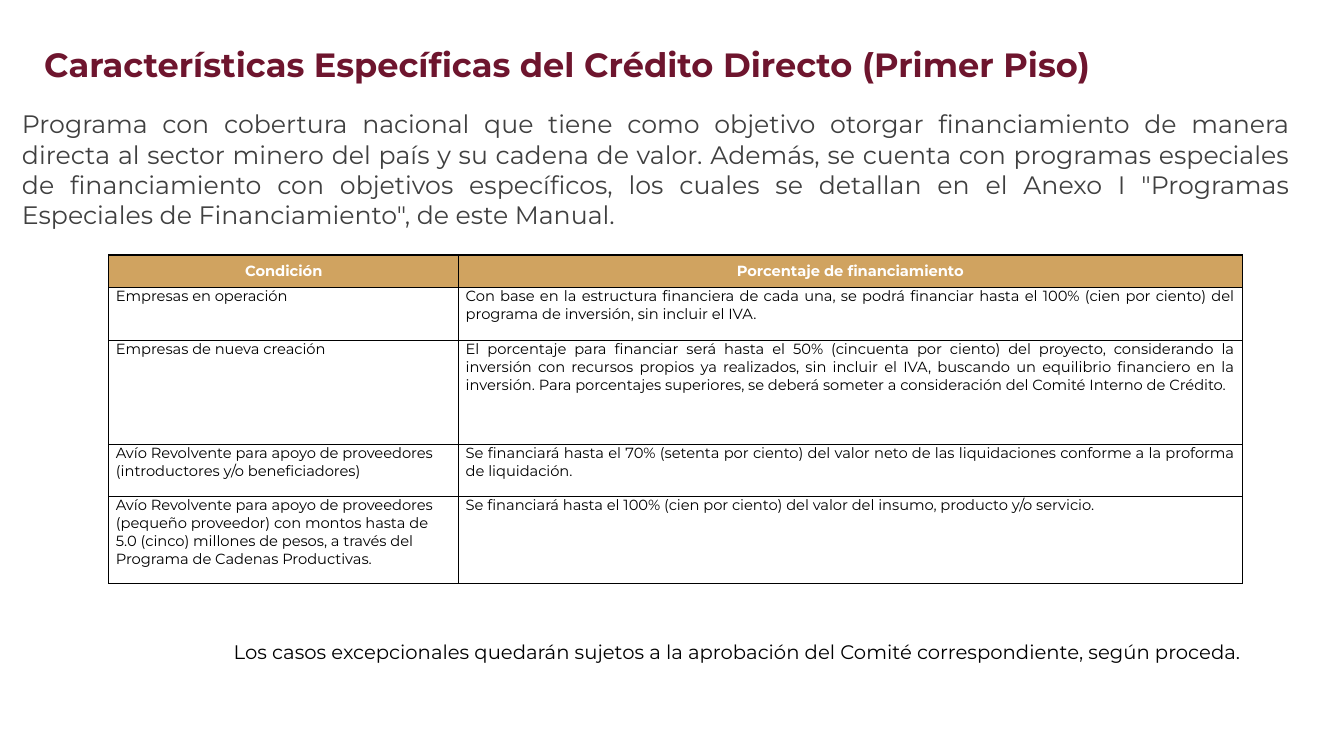
from lxml import etree
from pptx import Presentation
from pptx import util as u
from pptx.dml import color
from pptx.enum import text
from pptx.oxml import ns

FONT = "Montserrat"
COLORS = {"wine": "6E152E", "gray": "404040", "gold": "D0A360",
          "white": "FFFFFF", "black": "000000"}
ALIGN = text.PP_ALIGN

TITLE = "Características Específicas del Crédito Directo (Primer Piso)"
INTRO = ("Programa con cobertura nacional que tiene como objetivo otorgar financiamiento de "
         "manera directa al sector minero del país y su cadena de valor. Además, se cuenta con "
         "programas especiales de financiamiento con objetivos específicos, los cuales se "
         "detallan en el Anexo I \"Programas Especiales de Financiamiento\", de este Manual.")
NOTE = ("Los casos excepcionales quedarán sujetos a la aprobación del Comité correspondiente, "
        "según proceda.")
CONDITIONS = [
    ("Condición", "Porcentaje de financiamiento"),
    ("Empresas en operación",
     "Con base en la estructura financiera de cada una, se podrá financiar hasta el 100% "
     "(cien por ciento) del programa de inversión, sin incluir el IVA."),
    ("Empresas de nueva creación",
     "El porcentaje para financiar será hasta el 50% (cincuenta por ciento) del proyecto, "
     "considerando la inversión con recursos propios ya realizados, sin incluir el IVA, "
     "buscando un equilibrio financiero en la inversión. Para porcentajes superiores, se "
     "deberá someter a consideración del Comité Interno de Crédito."),
    ("Avío Revolvente para apoyo de proveedores (introductores y/o beneficiadores)",
     "Se financiará hasta el 70% (setenta por ciento) del valor neto de las liquidaciones "
     "conforme a la proforma de liquidación."),
    ("Avío Revolvente para apoyo de proveedores (pequeño proveedor) con montos hasta de 5.0 "
     "(cinco) millones de pesos, a través del Programa de Cadenas Productivas.",
     "Se financiará hasta el 100% (cien por ciento) del valor del insumo, producto y/o "
     "servicio."),
]
COLUMN_WIDTHS = [3.47, 7.77]
ROW_HEIGHTS = [0.32, 0.53, 1.03, 0.52, 0.86]


def write(frame, words, size, tone, align, bold=False):
    para = frame.paragraphs[0]
    para.text = words
    para.alignment = align
    for span in para.runs:
        span.font.name = FONT
        span.font.size = u.Pt(size)
        span.font.bold = bold
        span.font.color.rgb = color.RGBColor.from_string(COLORS[tone])


def add_text(page, box, words, size, tone, align=ALIGN.JUSTIFY, bold=False):
    frame = page.shapes.add_textbox(*map(u.Inches, box)).text_frame
    frame.word_wrap = True
    frame.auto_size = text.MSO_AUTO_SIZE.SHAPE_TO_FIT_TEXT
    write(frame, words, size, tone, align, bold)


def add_borders(cell, tone, width):
    properties = cell._tc.get_or_add_tcPr()
    for side in ("a:lnL", "a:lnR", "a:lnT", "a:lnB"):
        line = etree.SubElement(properties, ns.qn(side), w=str(u.Pt(width)))
        fill = etree.SubElement(line, ns.qn("a:solidFill"))
        etree.SubElement(fill, ns.qn("a:srgbClr"), val=COLORS[tone])


def add_conditions(page, box):
    table = page.shapes.add_table(len(CONDITIONS), len(COLUMN_WIDTHS),
                                  *map(u.Inches, box)).table
    table.horz_banding = False
    for column, width in zip(table.columns, COLUMN_WIDTHS):
        column.width = u.Inches(width)
    for row, height in zip(table.rows, ROW_HEIGHTS):
        row.height = u.Inches(height)

    for r, entries in enumerate(CONDITIONS):
        for c, words in enumerate(entries):
            cell = table.cell(r, c)
            cell.margin_left = cell.margin_right = u.Inches(0.07)
            cell.margin_top = cell.margin_bottom = 0
            add_borders(cell, "black", 1)
            if r == 0:
                cell.vertical_anchor = text.MSO_ANCHOR.MIDDLE
                cell.fill.solid()
                cell.fill.fore_color.rgb = color.RGBColor.from_string(COLORS["gold"])
                write(cell.text_frame, words, 10.5, "white", ALIGN.CENTER, True)
            else:
                cell.fill.background()
                align = ALIGN.JUSTIFY if c else ALIGN.LEFT
                write(cell.text_frame, words, 10.5, "black", align)


def main():
    deck = Presentation()
    deck.slide_width, deck.slide_height = u.Inches(13.33), u.Inches(7.5)
    page = deck.slides.add_slide(deck.slide_layouts[6])

    # Introduction and title
    add_text(page, (0.12, 1.03, 12.77, 1.31), INTRO, 18, "gray")
    add_text(page, (0.34, 0.39, 10.87, 0.5), TITLE, 24, "wine", ALIGN.LEFT, True)

    # Financing conditions
    add_conditions(page, (1.08, 2.53, sum(COLUMN_WIDTHS), sum(ROW_HEIGHTS)))

    # Closing note
    add_text(page, (2.22, 6.3, 10.67, 0.34), NOTE, 14, "black")

    deck.save("out.pptx")


if __name__ == "__main__":
    main()
